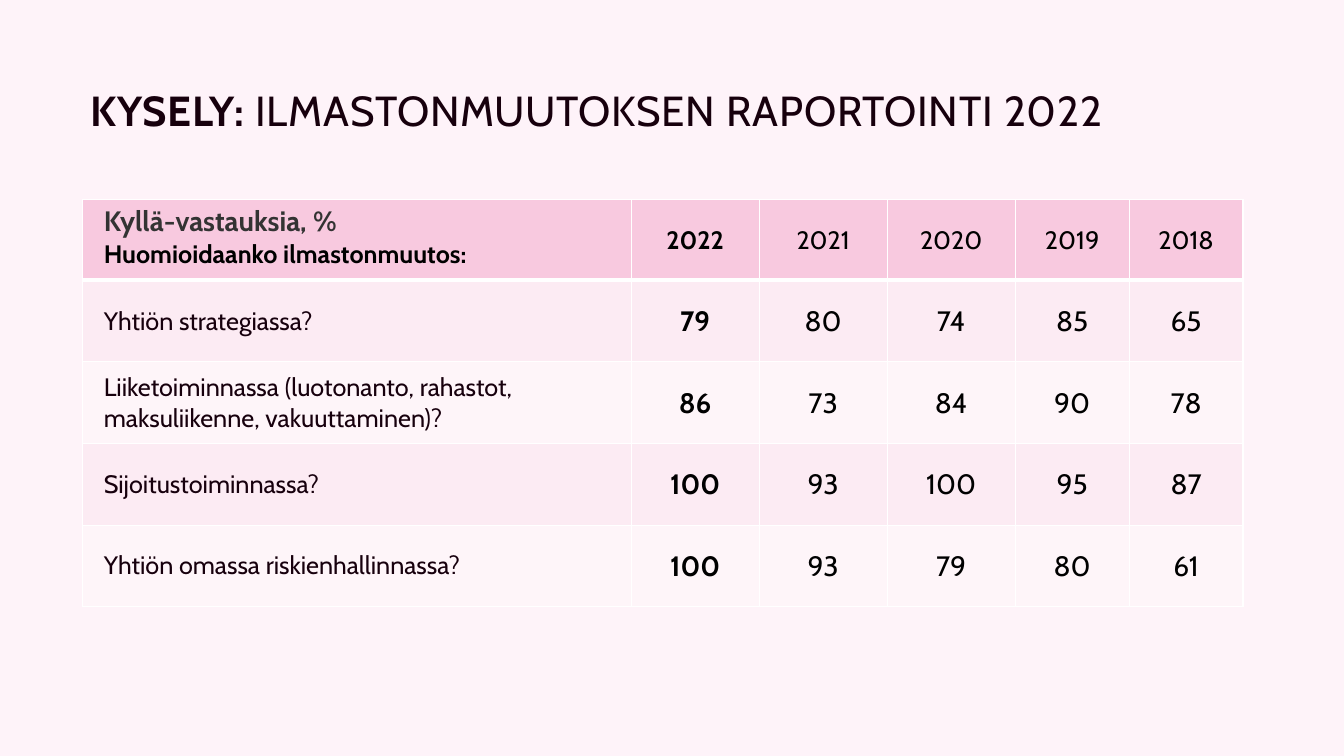
from lxml import etree
from pptx import Presentation
from pptx.dml.color import RGBColor
from pptx.enum import text
from pptx.oxml import ns
from pptx.util import Inches, Pt

COLORS = {
    "background": "FEF3F9", "ink": "17000D", "black": "000000", "grey": "333333",
    "header": "F8C9DF", "odd": "FCEBF3", "even": "FEF5F9", "border": "FFFFFF",
}
COLUMN_WIDTHS = [5.44, 1.27, 1.27, 1.27, 1.13, 1.13]
ROW_HEIGHTS = [0.8] + [0.81] * 4
ANSWERS = [
    ["Kyllä-vastauksia, %\vHuomioidaanko ilmastonmuutos:", 2022, 2021, 2020, 2019, 2018],
    ["Yhtiön strategiassa?", 79, 80, 74, 85, 65],
    ["Liiketoiminnassa (luotonanto, rahastot, maksuliikenne, vakuuttaminen)?", 86, 73, 84, 90, 78],
    ["Sijoitustoiminnassa?", 100, 93, 100, 95, 87],
    ["Yhtiön omassa riskienhallinnassa?", 100, 93, 79, 80, 61],
]


def style(run, size, color, bold):
    run.font.name = "Cabin"
    run.font.size = Pt(size)
    run.font.bold = bold
    run.font.color.rgb = RGBColor.from_string(COLORS[color])


def add_borders(cell, top, bottom):
    """Draw the four cell edges, with top and bottom widths in points."""
    widths = {"lnL": 1, "lnR": 1, "lnT": top, "lnB": bottom}
    properties = cell._tc.get_or_add_tcPr()
    for position, (edge, width) in enumerate(widths.items()):
        line = etree.Element(ns.qn(f"a:{edge}"), w=str(Pt(width)))
        fill = etree.SubElement(line, ns.qn("a:solidFill"))
        etree.SubElement(fill, ns.qn("a:srgbClr"), val=COLORS["border"])
        properties.insert(position, line)


prs = Presentation()
prs.slide_width, prs.slide_height = Inches(13.33), Inches(7.5)
slide = prs.slides.add_slide(prs.slide_layouts[6])
slide.background.fill.solid()
slide.background.fill.fore_color.rgb = RGBColor.from_string(COLORS["background"])

title = slide.shapes.add_textbox(Inches(0.8), Inches(0.4), Inches(11.5), Inches(1.45)).text_frame
title.word_wrap = True
title.vertical_anchor = text.MSO_ANCHOR.MIDDLE
heading = title.paragraphs[0]
heading.line_spacing = 0.9
for words, bold in [("KYSELY:", True), ("\N{NO-BREAK SPACE}ILMASTONMUUTOKSEN RAPORTOINTI 2022", False)]:
    run = heading.add_run()
    run.text = words
    style(run, 30, "ink", bold)
    run.font._element.set("spc", "50")

survey = slide.shapes.add_table(
    len(ROW_HEIGHTS), len(COLUMN_WIDTHS), Inches(0.82), Inches(1.98),
    Inches(sum(COLUMN_WIDTHS)), Inches(sum(ROW_HEIGHTS))).table
for column, width in zip(survey.columns, COLUMN_WIDTHS):
    column.width = Inches(width)
for row, height in zip(survey.rows, ROW_HEIGHTS):
    row.height = Inches(height)

for r, answers in enumerate(ANSWERS):
    band = "header" if r == 0 else "odd" if r % 2 else "even"
    for c, answer in enumerate(answers):
        cell = survey.cell(r, c)
        cell.fill.solid()
        cell.fill.fore_color.rgb = RGBColor.from_string(COLORS[band])
        add_borders(cell, top=3 if r == 1 else 1, bottom=3 if r == 0 else 1)
        cell.vertical_anchor = text.MSO_ANCHOR.MIDDLE
        cell.text_frame.text = str(answer)
        paragraph = cell.text_frame.paragraphs[0]
        if c == 0:
            cell.margin_left = cell.margin_right = Inches(0.21)
            cell.margin_top = cell.margin_bottom = Inches(0.03)
            style(paragraph.runs[0], 18, "ink", False)
        else:
            cell.margin_left = cell.margin_right = cell.margin_top = Inches(0.01)
            cell.margin_bottom = 0
            paragraph.alignment = text.PP_ALIGN.CENTER
            style(paragraph.runs[0], 18 if r == 0 else 20, "black", c == 1)

question = survey.cell(0, 0)
question.vertical_anchor = text.MSO_ANCHOR.TOP
question.margin_top = question.margin_bottom = Inches(0.05)
unit, prompt = question.text_frame.paragraphs[0].runs
style(unit, 20, "grey", True)
style(prompt, 18, "black", True)

prs.save("out.pptx")
